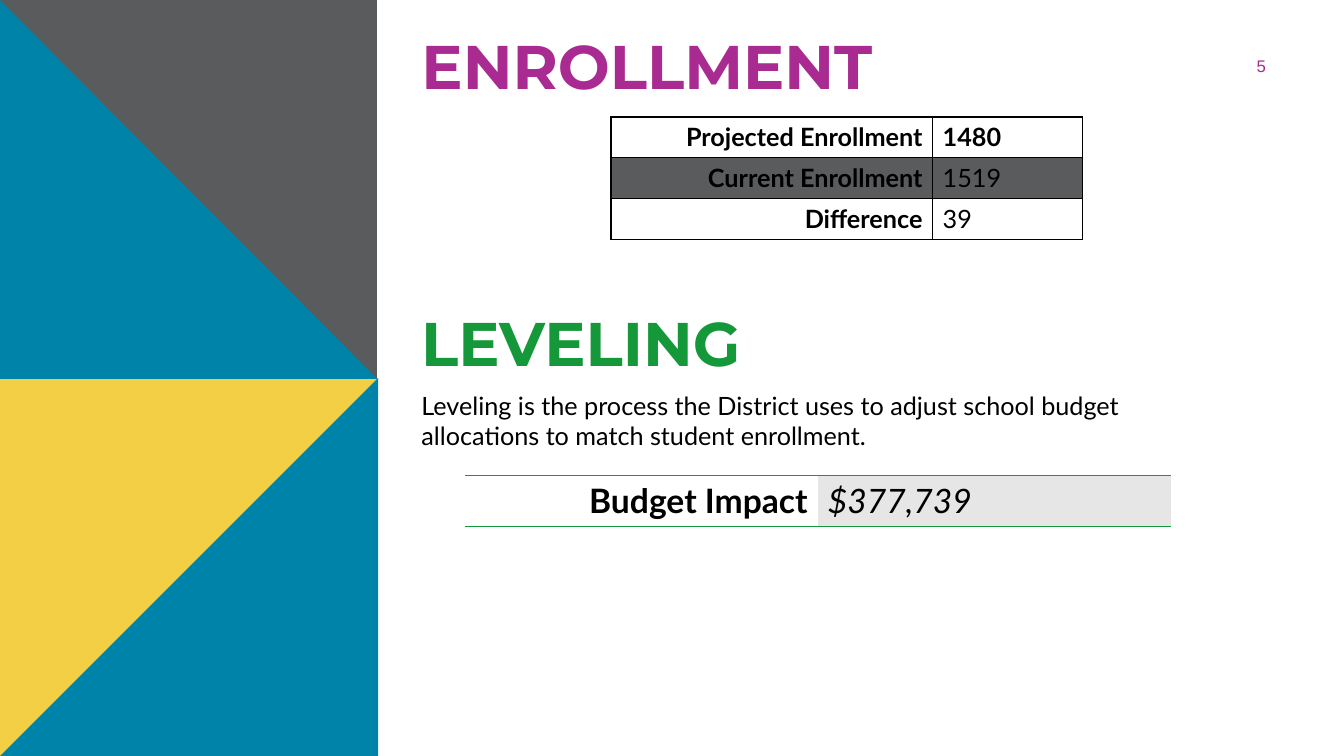
from dataclasses import dataclass
from lxml.etree import SubElement as Sub
from pptx import Presentation
from pptx.dml.color import RGBColor as Rgb
from pptx.enum.text import MSO_ANCHOR as Anchor, MSO_AUTO_SIZE as Auto, PP_ALIGN as Align
from pptx.oxml.ns import qn
from pptx.util import Pt

PX = 9144  # one px is a hundredth of an inch


@dataclass(frozen=True)
class Theme:
    blue: str = "0083A9"
    gold: str = "F3CF45"
    gray: str = "595B5D"
    pale: str = "E7E6E6"
    plum: str = "A92A91"
    green: str = "159839"
    black: str = "000000"
    head: str = "Montserrat"
    body: str = "Lato"
    plain: str = "Arial"
    big: int = 44
    mid: int = 24
    text: int = 18
    small: int = 12


T = Theme()


def emu(*px):
    return [n * PX for n in px]


def place(shape, box):
    shape.left, shape.top, shape.width, shape.height = emu(*box)


def write(frame, text, size, font, color, bold=False, slant=False,
          align=Align.LEFT, anchor=Anchor.TOP):
    frame.word_wrap = True
    frame.vertical_anchor = anchor
    para = frame.paragraphs[0]
    para.alignment = align
    para.space_before = Pt(0)
    run = para.add_run()
    run.text = text
    face = run.font
    face.size, face.name, face.bold, face.italic = Pt(size), font, bold, slant
    face.color.rgb = Rgb.from_string(color)


def label(shape, box, text, size, font, color, **look):
    place(shape, box)
    shape.text_frame.auto_size = Auto.NONE
    write(shape.text_frame, text, size, font, color, **look)


def panel(slide, color, *points):
    """Filled outline through the given px points."""
    path = slide.shapes.build_freeform(*points[0], scale=PX)
    path.add_line_segments(points[1:], close=True)
    shape = path.convert_to_shape()
    shape.shadow.inherit = False
    shape.fill.solid()
    shape.fill.fore_color.rgb = Rgb.from_string(color)
    shape.line.fill.background()


def edge(cell, sides, color):
    """One-point lines on the named sides, none on the others."""
    props = cell._tc.get_or_add_tcPr()
    for side in "LRTB":
        line = Sub(props, qn("a:ln" + side), w=str(Pt(1)))
        if side in sides:
            fill = Sub(line, qn("a:solidFill"))
            Sub(fill, qn("a:srgbClr"), val=color)
        else:
            Sub(line, qn("a:noFill"))


def paint(cell, color, alpha):
    if color is None:
        cell.fill.background()
        return
    cell.fill.solid()
    cell.fill.fore_color.rgb = Rgb.from_string(color)
    if alpha < 100:
        tint = cell._tc.tcPr.find(".//" + qn("a:srgbClr"))
        Sub(tint, qn("a:alpha"), val=str(alpha * 1000))


def grid(slide, box, cols, rows, size, sides, line, anchor):
    """Each row: name, value, value look, then a (color, alpha) per cell."""
    frame = slide.shapes.add_table(len(rows), len(cols), *emu(*box))
    table = frame.table
    table.first_row = table.horz_banding = False
    for col, width in zip(table.columns, cols):
        col.width = width * PX
    for row, (name, value, look, fills) in zip(table.rows, rows):
        row.height = box[3] * PX // len(rows)
        looks = (dict(bold=True, align=Align.RIGHT), look)
        for cell, text, style, fill in zip(row.cells, (name, value), looks, fills):
            edge(cell, sides, line)
            paint(cell, *fill)
            write(cell.text_frame, text, size, T.body, T.black, **style)
            cell.vertical_anchor = anchor


def main():
    deck = Presentation()
    deck.slide_width, deck.slide_height = emu(1333, 750)
    slide = deck.slides.add_slide(deck.slide_layouts[1])

    # Side panels
    panel(slide, T.gold, (0, 375), (375, 375), (375, 750), (0, 750))
    panel(slide, T.blue, (375, 375), (375, 750), (0, 750))
    panel(slide, T.gray, (0, 0), (374, 0), (374, 376), (0, 376))
    panel(slide, T.blue, (0, 0), (374, 376), (0, 376))

    # Headings and page number
    def box():
        return slide.shapes.add_textbox(0, 0, 0, 0)

    label(slide.shapes.title, (408, 23, 740, 84), "ENROLLMENT",
          T.big, T.head, T.plum, bold=True)
    label(box(), (408, 298, 740, 84), "LEVELING",
          T.big, T.head, T.green, bold=True)
    label(box(), (1197, 50, 108, 30), "5", T.small, T.plain, T.plum,
          align=Align.CENTER, anchor=Anchor.MIDDLE)

    # Leveling text, without a bullet
    body = slide.placeholders[1]
    label(body, (408, 382, 826, 71),
          "Leveling is the process the District uses to adjust school budget "
          "allocations to match student enrollment.", T.text, T.body, T.black)
    props = body.text_frame.paragraphs[0]._p.get_or_add_pPr()
    props.set("marL", "0")
    props.set("indent", "0")
    Sub(props, qn("a:buNone"))

    # Tables
    clear, tint = (None, 100), (T.gray, 20)
    grid(slide, (606, 116, 468, 122), (319, 149), [
        ("Projected Enrollment", "1480", dict(bold=True), (clear, clear)),
        ("Current Enrollment", "1519", {}, (tint, tint)),
        ("Difference", "39", {}, (clear, clear)),
    ], T.text, "LRTB", T.black, Anchor.TOP)
    grid(slide, (461, 472, 700, 50), (350, 350), [
        ("Budget Impact", "$377,739", dict(slant=True), (clear, (T.pale, 100))),
    ], T.mid, "TB", T.green, Anchor.MIDDLE)

    deck.save("out.pptx")


if __name__ == "__main__":
    main()
